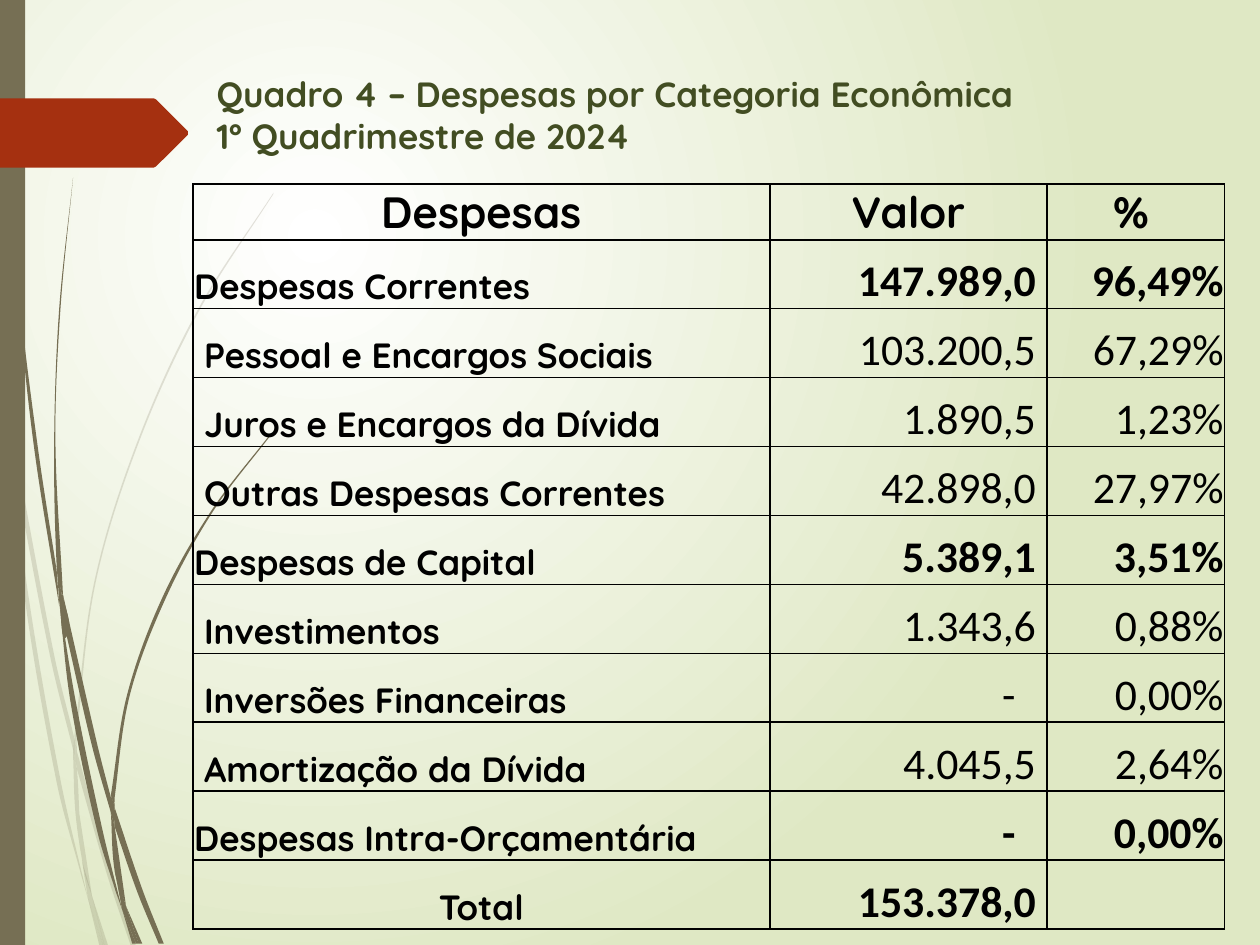
import math

from lxml import etree
from pptx import Presentation
from pptx import util as u
from pptx.dml.color import RGBColor
from pptx.enum import shapes, text
from pptx.oxml import ns

OLIVE = RGBColor(0x76, 0x6F, 0x54)
RUST = RGBColor(0xA5, 0x30, 0x10)
MOSS = RGBColor(0x42, 0x4D, 0x22)
PALE = RGBColor(0xDF, 0xE8, 0xC4)
WHITE = RGBColor(0xFF, 0xFF, 0xFF)
BLACK = RGBColor(0, 0, 0)

SLIDE_W, SLIDE_H = 10, 7.5
HEAD_FONT, NUMBER_FONT = "Quicksand", "Calibri"
LEFT, CENTER, RIGHT = text.PP_ALIGN.LEFT, text.PP_ALIGN.CENTER, text.PP_ALIGN.RIGHT
MIDDLE, BOTTOM = text.MSO_ANCHOR.MIDDLE, text.MSO_ANCHOR.BOTTOM

TABLE_X, TABLE_Y, TABLE_H, HEADER_H = 1.53, 1.46, 5.91, 0.44
COLUMNS = (4.58, 2.2, 1.41)
INSET, INDENT, DASH_INDENT = 0.01, 0.09, 0.25

HEADERS = ("Despesas", "Valor", "%")
ROWS = [
    ("Despesas Correntes", "147.989,0", "96,49%", True),
    ("Pessoal e Encargos Sociais", "103.200,5", "67,29%", False),
    ("Juros e Encargos da Dívida", "1.890,5", "1,23%", False),
    ("Outras Despesas Correntes", "42.898,0", "27,97%", False),
    ("Despesas de Capital", "5.389,1", "3,51%", True),
    ("Investimentos", "1.343,6", "0,88%", False),
    ("Inversões Financeiras", "-", "0,00%", False),
    ("Amortização da Dívida", "4.045,5", "2,64%", False),
    ("Despesas Intra-Orçamentária", "-", "0,00%", True),
    ("Total", "153.378,0", "", True),
]

PALE_BLADES = [
    ([(0.08, 3.5), (0.06, 3.22), (0, 2.82)], [(0, 2.99), (0.07, 3.44)]),
    ([(0.1, 3.45), (0.43, 5.2), (0.59, 5.86)], [(0.59, 5.99), (0.4, 5.22), (0.12, 3.76)]),
    ([(0.61, 5.96), (0.88, 6.92), (1.08, 7.51)], [(1.04, 7.51), (0.85, 6.94), (0.61, 6.1)]),
    ([(0.73, 7.11), (0.86, 7.51)], [(0.83, 7.51)]),
    ([(0.08, 3.5), (0.22, 4.69), (0.48, 6.19), (0.7, 7.14)],
     [(0.64, 6.93), (0.45, 6.21), (0.19, 4.7), (0.08, 3.5)]),
    ([(0.58, 5.99), (0.6, 6.46), (0.67, 6.92), (0.73, 7.11)],
     [(0.63, 6.46), (0.61, 6.1), (0.58, 5.99)]),
    ([(0.61, 5.96), (0.61, 5.84), (0.76, 4.62), (1.11, 3.49), (1.59, 2.45), (2.17, 1.54)],
     [(2.17, 1.53), (1.58, 2.44), (1.1, 3.48), (0.75, 4.61), (0.59, 5.84)]),
    ([(0.7, 7.14), (0.82, 7.51)], [(0.79, 7.51)]),
    ([(0.61, 6.1), (0.61, 5.96), (0.59, 5.86)], [(0.58, 5.99), (0.61, 6.08)]),
    ([(0.65, 6.83), (0.73, 7.11), (0.83, 7.51)], [(0.82, 7.51), (0.7, 7.14)]),
]
DARK_BLADES = [
    ([(0.02, 0), (0.05, 1.1), (0.14, 2.33), (0.27, 3.55), (0.47, 4.81)],
     [(0.45, 4.53), (0.3, 3.55), (0.15, 2.32), (0.06, 1.09), (0.03, 0)]),
    ([(0.5, 4.72), (0.77, 5.9), (0.88, 6.33)], [(0.88, 6.45), (0.73, 5.92), (0.53, 5.05)]),
    ([(0.91, 6.41), (1.13, 7.06), (1.3, 7.49)], [(1.26, 7.49), (1.09, 7.08), (0.91, 6.56)]),
    ([(0.47, 4.77), (0.6, 5.56), (0.81, 6.57), (0.97, 7.22)],
     [(0.92, 7.08), (0.77, 6.59), (0.56, 5.57), (0.47, 4.77)]),
    ([(0.58, 1.41), (0.48, 2.45), (0.44, 3.49), (0.5, 4.72)],
     [(0.49, 4.72), (0.45, 4.49), (0.43, 3.49), (0.47, 2.45), (0.58, 1.41)]),
    ([(1, 7.19), (1.13, 7.49)], [(1.1, 7.49)]),
    ([(0.45, 4.49), (0.49, 4.72)], [(0.5, 4.72), (0.53, 5.05), (0.47, 4.77)]),
    ([(0.91, 6.41), (0.91, 6.33), (1.03, 5.52), (1.31, 4.76), (1.69, 4.06), (2.16, 3.44)],
     [(2.15, 3.44), (1.68, 4.05), (1.29, 4.74), (1.01, 5.51), (0.88, 6.31)]),
    ([(0.97, 7.22), (1.08, 7.49)], [(1.05, 7.49)]),
    ([(0.88, 6.45), (0.91, 6.91), (1, 7.19)], [(0.91, 6.56), (0.88, 6.45)]),
    ([(0.88, 6.31), (0.91, 6.41), (0.91, 6.56)], [(0.88, 6.45)]),
    ([(0.91, 6.91), (1, 7.19), (1.1, 7.49)], [(1.08, 7.49), (0.97, 7.22)]),
]
ARROW = [(0, 0.78), (1.22, 0.78), (1.24, 0.79), (1.49, 1.04),
         (1.49, 1.07), (1.24, 1.32), (1.22, 1.33), (0, 1.33)]


def handle(point, start, end, reach):
    """Return a curve handle leaving a point along the chord from start to end."""
    dx, dy = end[0] - start[0], end[1] - start[1]
    scale = reach / (math.hypot(dx, dy) or 1)
    return point[0] + dx * scale, point[1] + dy * scale


def curve_edges(sp, turn):
    """Bend the straight sides of a blade, leaving a corner at the turn."""
    lines = list(sp._element.iter(ns.qn("a:lnTo")))
    nodes = [sp._element.find(".//" + ns.qn("a:moveTo")), *lines]
    points = [(int(n[0].get("x")), int(n[0].get("y"))) for n in nodes]
    for i, line in enumerate(lines, 1):
        if i == turn or i == len(points):
            continue
        first, last = (0, turn - 1) if i < turn else (turn, len(points) - 1)
        a, b = points[i - 1], points[i]
        reach = math.dist(a, b) / 3
        before, after = points[max(i - 2, first)], points[min(i + 1, last)]
        line.tag = ns.qn("a:cubicBezTo")
        for k, (x, y) in enumerate((handle(a, before, b, reach), handle(b, after, a, reach))):
            line.insert(k, etree.Element(ns.qn("a:pt"), x=str(round(x)), y=str(round(y))))


def paint(sp, color, alpha=None):
    """Give a shape a flat fill with no line or shadow."""
    sp.shadow.inherit = False
    sp.fill.solid()
    sp.fill.fore_color.rgb = color
    sp.line.fill.background()
    if alpha:
        tint = sp.fill._xPr.find(".//" + ns.qn("a:srgbClr"))
        etree.SubElement(tint, ns.qn("a:alpha"), val=str(alpha * 1000))


def add_outline(parent, points, color, alpha=None):
    """Draw a closed filled outline from points in inches."""
    first, *rest = [(u.Inches(x), u.Inches(y)) for x, y in points]
    builder = parent.build_freeform(*first)
    builder.add_line_segments(rest, close=True)
    sp = builder.convert_to_shape()
    paint(sp, color, alpha)
    return sp


def add_blades(s, blades, alpha=None):
    """Draw one group of grass blades."""
    group = s.shapes.add_group_shape()
    for out, back in blades:
        curve_edges(add_outline(group.shapes, out + back, OLIVE, alpha), len(out))


def set_background(s):
    """Fill the background with a radial gradient."""
    fill = s.background.fill
    fill.gradient()
    for stop, color in zip(fill.gradient_stops, (WHITE, PALE)):
        stop.color.rgb = color
    lin = s._element.find(".//" + ns.qn("a:lin"))
    radial = etree.Element(ns.qn("a:path"), path="circle")
    etree.SubElement(radial, ns.qn("a:fillToRect"), l="50000", t="50000", r="100000", b="100000")
    lin.getparent().replace(lin, radial)


def format_font(font, color=BLACK, **values):
    """Apply format values to a font."""
    font.color.rgb = color
    for name, value in values.items():
        setattr(font, name, value)


def set_title(s, words):
    """Place and format the title in front of the decoration."""
    sp = s.shapes.title
    sp._element.getparent().append(sp._element)
    for name, value in dict(left=1.62, top=0.51, width=8.5, height=0.79).items():
        setattr(sp, name, u.Inches(value))
    tf = sp.text_frame
    tf.text = words
    tf.auto_size = text.MSO_AUTO_SIZE.NONE
    tf.vertical_anchor = MIDDLE
    p = tf.paragraphs[0]
    p.alignment = LEFT
    for r in p.runs:
        format_font(r.font, MOSS, name=HEAD_FONT, size=u.Pt(20), bold=True)


def fill_cell(cell, words, align, anchor=BOTTOM, left=INSET, right=INSET, **font):
    """Write one bordered, unfilled table cell."""
    for side in "LRTB":
        line = etree.SubElement(cell._tc.get_or_add_tcPr(), ns.qn("a:ln" + side), w="12700")
        solid = etree.SubElement(line, ns.qn("a:solidFill"))
        etree.SubElement(solid, ns.qn("a:srgbClr"), val=str(BLACK))
    cell.fill.background()
    margins = dict(margin_left=left, margin_right=right, margin_top=INSET, margin_bottom=0)
    for name, value in margins.items():
        setattr(cell, name, u.Inches(value))
    cell.vertical_anchor = anchor
    p = cell.text_frame.paragraphs[0]
    p.alignment = align
    if words:
        r = p.add_run()
        r.text = words
        format_font(r.font, **font)


def add_expense_table(s):
    """Add the table of expenses, values and shares."""
    frame = s.shapes.add_table(len(ROWS) + 1, len(COLUMNS), u.Inches(TABLE_X), u.Inches(TABLE_Y),
                               u.Inches(sum(COLUMNS)), u.Inches(TABLE_H))
    table = frame.table
    table.first_row = table.horz_banding = False
    for column, width in zip(table.columns, COLUMNS):
        column.width = u.Inches(width)
    for i, row in enumerate(table.rows):
        row.height = u.Inches((TABLE_H - HEADER_H) / len(ROWS) if i else HEADER_H)
    for i, words in enumerate(HEADERS):
        fill_cell(table.cell(0, i), words, CENTER, MIDDLE, right=INDENT if words == "%" else INSET,
                  name=HEAD_FONT, size=u.Pt(25), bold=True)
    for i, (label, value, share, strong) in enumerate(ROWS, 1):
        number = dict(name=NUMBER_FONT, size=u.Pt(25), bold=strong)
        fill_cell(table.cell(i, 0), label, CENTER if label == "Total" else LEFT,
                  left=INSET if strong else INDENT, name=HEAD_FONT, size=u.Pt(20), bold=True)
        fill_cell(table.cell(i, 1), value, RIGHT,
                  right=DASH_INDENT if value == "-" else INDENT, **number)
        fill_cell(table.cell(i, 2), share, RIGHT, **number)


def main():
    """Build the slide and save it."""
    prs = Presentation()
    prs.slide_width, prs.slide_height = u.Inches(SLIDE_W), u.Inches(SLIDE_H)
    s = prs.slides.add_slide(prs.slide_layouts[5])
    set_background(s)
    add_blades(s, PALE_BLADES, alpha=20)
    add_blades(s, DARK_BLADES)
    bar = s.shapes.add_shape(shapes.MSO_SHAPE.RECTANGLE, 0, 0, u.Inches(0.2), prs.slide_height)
    paint(bar, OLIVE)
    add_outline(s.shapes, ARROW, RUST)
    set_title(s, "Quadro 4 – Despesas por Categoria Econômica\v1º Quadrimestre de 2024")
    add_expense_table(s)
    prs.save("out.pptx")


if __name__ == "__main__":
    main()
